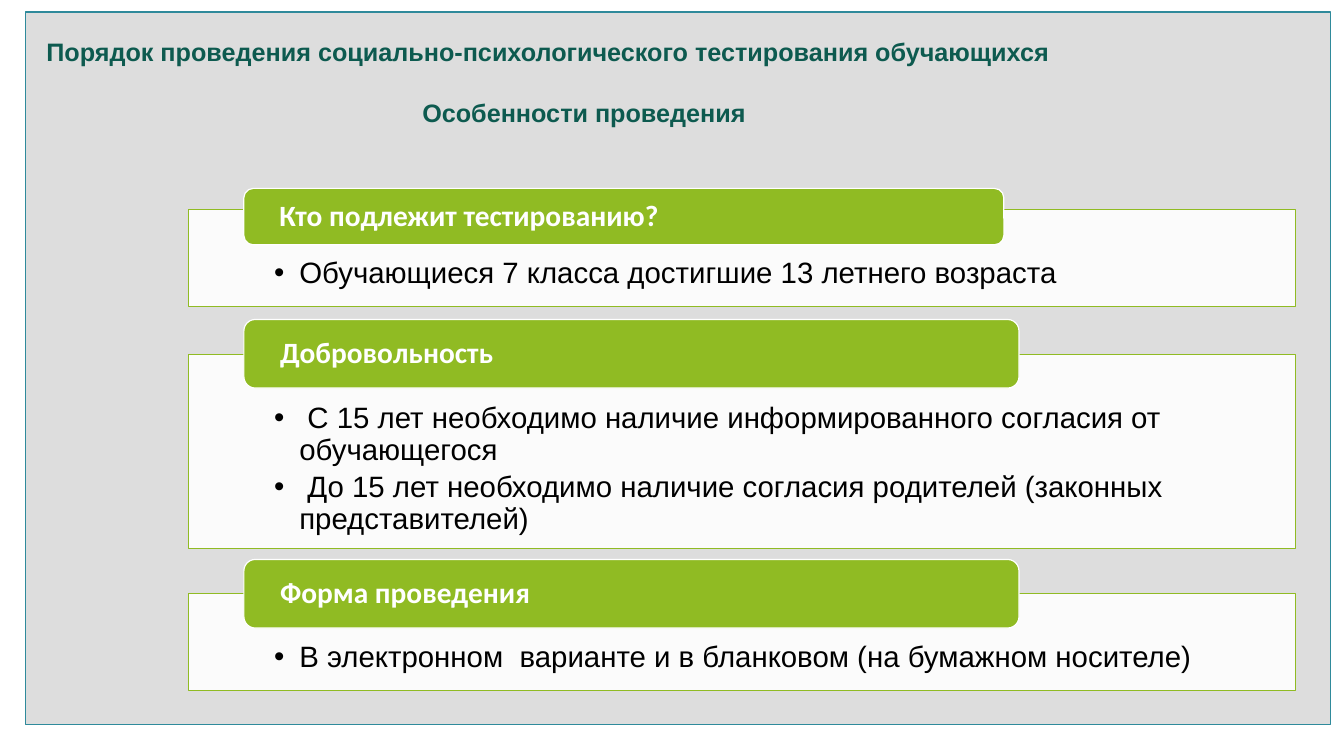
from dataclasses import dataclass

from lxml.etree import SubElement
from pptx import Presentation
from pptx.dml.color import RGBColor
from pptx.enum.shapes import MSO_SHAPE as SHAPE
from pptx.enum.text import MSO_ANCHOR as ANCHOR, MSO_AUTO_SIZE as AUTO, PP_ALIGN as ALIGN
from pptx.oxml.ns import qn
from pptx.util import Pt


@dataclass(frozen=True)
class Theme:
    panel: str = "DDDDDD"
    panel_line: str = "2F8A9B"
    heading: str = "0D5A4F"
    green: str = "90BB23"
    white: str = "FFFFFF"
    black: str = "000000"
    body_font: str = "Arial"
    bar_font: str = "Calibri"
    heading_size: float = 18
    text_size: float = 21
    line_width: float = 0.85


THEME = Theme()
BOX_LEFT, BOX_WIDTH = 134.6, 790.6
BAR_LEFT = 174.2

# Bar heading, bar (top, width, height), box (top, height), bullets
SECTIONS = [
    ("Кто подлежит тестированию?", (134.6, 542.9, 40.3), (149.8, 69.1),
     ["Обучающиеся 7 класса достигшие 13 летнего возраста"]),
    ("Добровольность", (228.2, 553.7, 49), (253.4, 138.2),
     [" С 15 лет необходимо наличие информированного согласия от обучающегося",
      " До 15 лет необходимо наличие согласия родителей (законных представителей)"]),
    ("Форма проведения", (399.6, 553.7, 49), (424.1, 69.1),
     ["В электронном  варианте и в бланковом (на бумажном носителе)"]),
]


def add_block(s, kind, left, top, width, height, fill, line, alpha=None):
    sp = s.shapes.add_shape(kind, Pt(left), Pt(top), Pt(width), Pt(height))
    sp.shadow.inherit = False
    sp.fill.solid()
    sp.fill.fore_color.rgb = RGBColor.from_string(fill)
    sp.line.color.rgb = RGBColor.from_string(line)
    sp.line.width = Pt(THEME.line_width)
    if alpha is not None:
        color = sp.fill._xPr.find(qn("a:solidFill"))[0]
        SubElement(color, qn("a:alpha"), val=str(alpha * 1000))
    return sp


def set_frame(sp, anchor, left, top, right, bottom):
    tf = sp.text_frame
    tf.word_wrap = True
    tf.auto_size = AUTO.NONE
    tf.vertical_anchor = anchor
    tf.margin_left, tf.margin_top = Pt(left), Pt(top)
    tf.margin_right, tf.margin_bottom = Pt(right), Pt(bottom)
    return tf


def write(p, text, *, font, size, color, bold=False, align=ALIGN.LEFT,
          spacing=1.0, before=0, after=0):
    p.alignment = align
    p.line_spacing = spacing
    p.space_before, p.space_after = Pt(before), Pt(after)
    r = p.add_run()
    r.text = text
    r.font.name, r.font.size, r.font.bold = font, Pt(size), bold
    r.font.color.rgb = RGBColor.from_string(color)


def add_bullet(p, indent=18):
    pPr = p._p.get_or_add_pPr()
    pPr.set("marL", str(Pt(indent)))
    pPr.set("indent", str(-Pt(indent)))
    SubElement(pPr, qn("a:buFont"), typeface=THEME.body_font)
    SubElement(pPr, qn("a:buChar"), char="•")


def add_panel(s):
    sp = add_block(s, SHAPE.RECTANGLE, 18, 8.6, 932.4, 509, THEME.panel, THEME.panel_line)
    s.shapes._spTree.insert(2, sp._element)  # behind the title


def add_title(s):
    sp = s.shapes.title
    sp.left, sp.top, sp.width, sp.height = Pt(25.9), Pt(22.3), Pt(782.6), Pt(72.7)
    tf = set_frame(sp, ANCHOR.TOP, 7.2, 3.6, 7.2, 3.6)
    look = dict(font=THEME.body_font, size=THEME.heading_size, color=THEME.heading, bold=True)
    write(tf.paragraphs[0],
          "Порядок проведения социально-психологического тестирования обучающихся", **look)
    write(tf.add_paragraph(), "Особенности проведения", align=ALIGN.CENTER, before=22, **look)


def add_section(s, heading, bar, box, bullets):
    # Box with bullets
    top, height = box
    sp = add_block(s, SHAPE.RECTANGLE, BOX_LEFT, top, BOX_WIDTH, height,
                   THEME.white, THEME.green, alpha=90)
    tf = set_frame(sp, ANCHOR.TOP, 61.2, 34.6, 61.2, 11.5)
    for i, text in enumerate(bullets):
        p = tf.add_paragraph() if i else tf.paragraphs[0]
        write(p, text, font=THEME.body_font, size=THEME.text_size, color=THEME.black,
              spacing=0.9, after=4)
        add_bullet(p)

    # Heading bar over the box's top edge
    top, width, height = bar
    sp = add_block(s, SHAPE.ROUNDED_RECTANGLE, BAR_LEFT, top, width, height,
                   THEME.green, THEME.white)
    tf = set_frame(sp, ANCHOR.MIDDLE, 23.5, 0, 23.5, 0)
    write(tf.paragraphs[0], heading, font=THEME.bar_font, size=THEME.text_size,
          color=THEME.white, bold=True, spacing=0.9)


def main():
    prs = Presentation()
    prs.slide_width, prs.slide_height = Pt(960), Pt(540)
    s = prs.slides.add_slide(prs.slide_layouts[5])
    add_panel(s)
    add_title(s)
    for section in SECTIONS:
        add_section(s, *section)
    prs.save("out.pptx")


if __name__ == "__main__":
    main()
